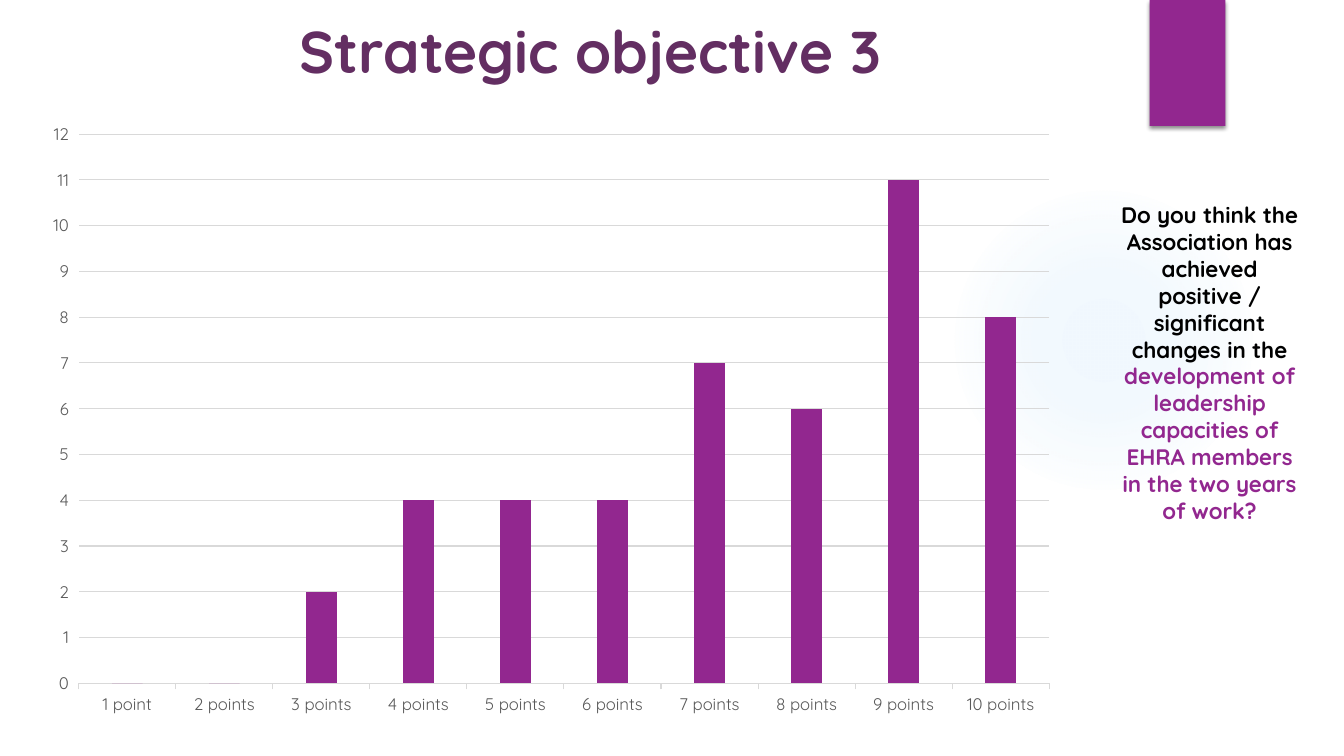
from lxml import etree
from pptx import Presentation
from pptx.chart.data import CategoryChartData
from pptx.dml.color import RGBColor
from pptx.enum.chart import XL_CHART_TYPE, XL_TICK_MARK
from pptx.enum.shapes import MSO_SHAPE
from pptx.enum.text import MSO_ANCHOR, PP_ALIGN
from pptx.oxml import parse_xml
from pptx.oxml.ns import nsdecls, qn
from pptx.util import Pt

PX = 9525
FONT = "Quicksand"
PURPLE, PLUM, BLUE = "92278F", "632E62", "45A5ED"
BLACK, GREY, RULE = "000000", "595959", "D9D9D9"
COLUMN = XL_CHART_TYPE.COLUMN_CLUSTERED
OVAL, RECT = MSO_SHAPE.OVAL, MSO_SHAPE.RECTANGLE
TOP, MIDDLE = MSO_ANCHOR.TOP, MSO_ANCHOR.MIDDLE
CENTER, TICK_OUT = PP_ALIGN.CENTER, XL_TICK_MARK.OUTSIDE
GLOW_STOPS = [(0, 7), (36, 6), (69, 0)]
SCORES = [0, 0, 2, 4, 4, 4, 7, 6, 11, 8]


def emu(*lengths):
    """Turn px lengths into EMU."""
    return [length * PX for length in lengths]


def rgb(color):
    """Turn a hex string into a colour."""
    return RGBColor.from_string(color)


def style_font(font, size, color, bold=False):
    """Set the face, size, colour and weight of a font."""
    font.name, font.size, font.bold = FONT, Pt(size), bold
    font.color.rgb = rgb(color)


def add_plain_shape(s, kind, box, color):
    """Add a filled shape without outline or shadow."""
    sp = s.shapes.add_shape(kind, *emu(*box))
    sp.fill.solid()
    sp.fill.fore_color.rgb = rgb(color)
    sp.line.fill.background()
    sp.shadow.inherit = False
    return sp


def add_glow(s, box):
    """Add a circle that fades out from its centre."""
    spPr = add_plain_shape(s, OVAL, box, BLUE).element.spPr
    stops = "".join(
        f'<a:gs pos="{pos * 1000}"><a:srgbClr val="{BLUE}">'
        f'<a:alpha val="{alpha * 1000}"/></a:srgbClr></a:gs>'
        for pos, alpha in GLOW_STOPS)
    grad = parse_xml(
        f'<a:gradFill {nsdecls("a")}><a:gsLst>{stops}</a:gsLst><a:path path="circle">'
        '<a:fillToRect l="50000" t="50000" r="50000" b="50000"/></a:path></a:gradFill>')
    spPr.replace(spPr.find(qn("a:solidFill")), grad)


def add_ribbon(s, box):
    """Add a rectangle with a soft shadow below it."""
    sp = add_plain_shape(s, RECT, box, PURPLE)
    effects = sp.element.spPr.find(qn("a:effectLst"))
    shadow = etree.SubElement(effects, qn("a:outerShdw"), blurRad=str(Pt(3)),
                              dist=str(Pt(2)), dir="5400000", rotWithShape="0")
    color = etree.SubElement(shadow, qn("a:srgbClr"), val=BLACK)
    etree.SubElement(color, qn("a:alpha"), val="45000")


def add_text(s, box, parts, size, anchor):
    """Add a centred bold paragraph made of (text, colour) parts."""
    tf = s.shapes.add_textbox(*emu(*box)).text_frame
    tf.word_wrap, tf.vertical_anchor = True, anchor
    p = tf.paragraphs[0]
    p.alignment = CENTER
    for text, color in parts:
        r = p.add_run()
        r.text = text
        style_font(r.font, size, color, True)


def style_axis(axis):
    """Set the ticks and labels of an axis."""
    axis.major_tick_mark = TICK_OUT
    style_font(axis.tick_labels.font, 12, GREY)


def style_rule(line):
    """Make a line thin and light grey."""
    line.color.rgb, line.width = rgb(RULE), Pt(0.75)


def add_score_chart(s, box):
    """Add the column chart of answers for each score."""
    data = CategoryChartData()
    data.categories = [f"{n} point{'s' if n > 1 else ''}"
                       for n in range(1, len(SCORES) + 1)]
    data.add_series("Series 1", SCORES)
    chart = s.shapes.add_chart(COLUMN, *emu(*box), data).chart
    chart.has_legend = chart.has_title = False
    style_font(chart.font, 10, BLACK)
    plot = chart.plots[0]
    plot.gap_width, plot.overlap, plot.vary_by_categories = 219, -27, False
    fill = plot.series[0].format.fill
    fill.solid()
    fill.fore_color.rgb = rgb(PURPLE)
    cat, val = chart.category_axis, chart.value_axis
    style_axis(cat)
    style_axis(val)
    style_rule(cat.format.line)
    style_rule(val.major_gridlines.format.line)
    val.format.line.fill.background()
    val.minimum_scale, val.maximum_scale, val.major_unit = 0, 12, 1


def main():
    """Build the slide and save it."""
    prs = Presentation()
    prs.slide_width, prs.slide_height = emu(1280, 720)
    s = prs.slides.add_slide(prs.slide_layouts[6])
    add_glow(s, (903, 176, 296, 296))
    add_ribbon(s, (1095, 0, 72, 120))
    add_text(s, (68, 7, 988, 82), [("Strategic objective 3", PLUM)], 42, MIDDLE)
    add_score_chart(s, (31, 106, 988, 586))
    question = [
        ("Do you think the Association has achieved positive / "
         "significant changes in the ", BLACK),
        ("development of leadership capacities of EHRA members "
         "in the two years of work?", PURPLE)]
    add_text(s, (1055, 187, 194, 320), question, 16, TOP)
    prs.save("out.pptx")


if __name__ == "__main__":
    main()
